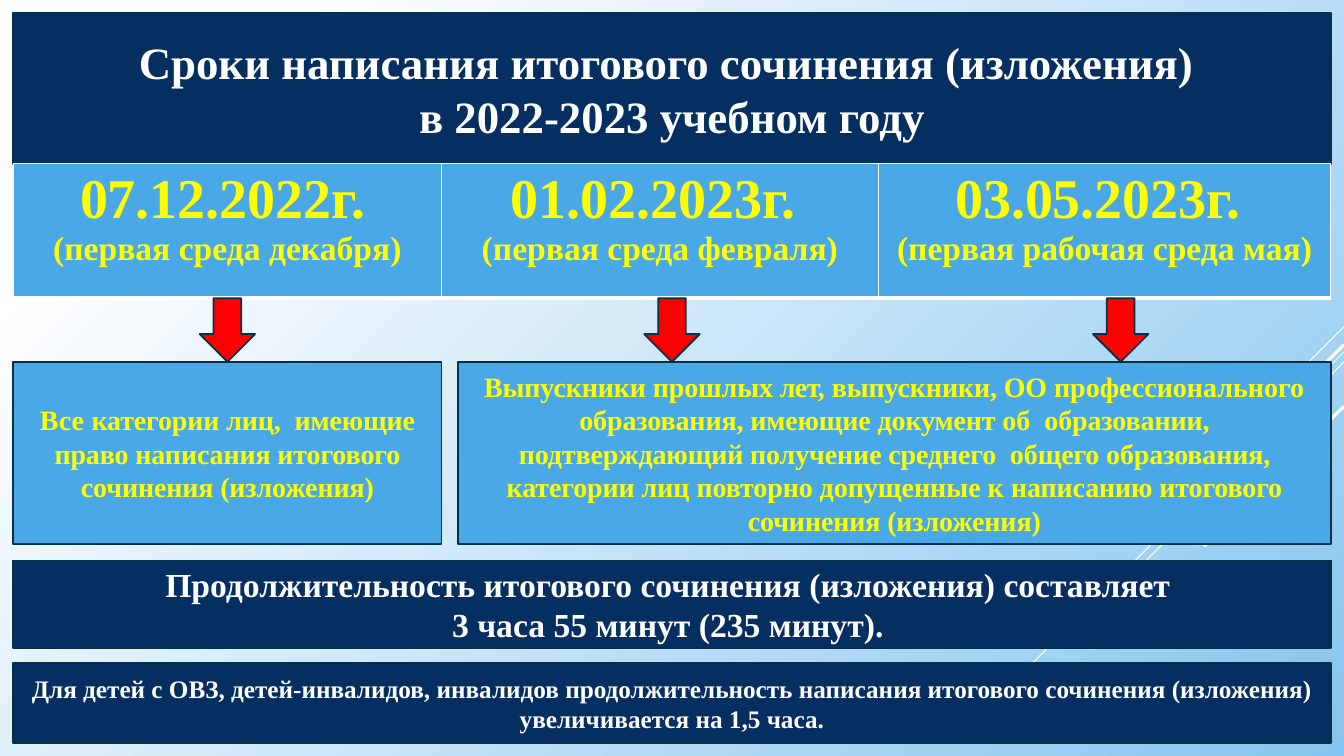
import pptx
import pptx.util
import pptx.dml.color
import pptx.enum.dml
import pptx.enum.shapes
import pptx.enum.text
import pptx.oxml
import pptx.oxml.ns

Inches = pptx.util.Inches
Pt = pptx.util.Pt
Shapes = pptx.enum.shapes.MSO_SHAPE

FONT = "Times New Roman"
NAVY, SKY, EDGE = "052F61", "4AA8E7", "043148"
WHITE, YELLOW, RED = "FFFFFF", "FFFF00", "FF0000"
LEFT, WIDTH, GAP = 0.13, 13.07, 0.16
COLUMNS = (4.25, 4.33, 4.49)
DATES_TOP, DATES_HEIGHT = 1.62, 1.34
CARDS_TOP, CARDS_HEIGHT = 3.59, 1.81
ARROW_WIDTH = 0.55

STRIPES = [
    (3.24, 12.33, 4.24, 0.75),
    (3.49, 10.07, 6.75, 0.75),
    (3.59, 11.26, 5.67, 0.75),
    (3.42, 11.42, 5.33, 2.25),
    (4.03, 11.94, 5.42, 2.25),
]
DATES = [
    ([("07.12.2022г.", 40), (" ", 28)], "(первая среда декабря)"),
    ([("01.02.2023г. ", 40)], "(первая среда февраля)"),
    ([("03.05.2023г. ", 40)], "(первая рабочая среда мая)"),
]
EVERYONE = [
    [("Все ", 0.1), ("категории лиц,  имеющие право написания итогового", -0.1)],
    [("сочинения (изложения)", -0.1)],
]
GRADUATES = [[
    ("Выпускники прошлых ", -0.1),
    ("лет,", -0.4),
    (" выпускники, ОО ", -0.1),
    ("профессионального ", 0),
    ("образования, имеющие документ ", -0.1),
    ("об  ", 0),
    ("образовании, подтверждающий получение среднего  общего образования, категории ", -0.1),
    ("лиц ", 0),
    ("повторно ", -0.1),
    ("допущенные к ", 0),
    ("написанию итогового сочинения (изложения)", -0.1),
]]


def color(value):
    return pptx.dml.color.RGBColor.from_string(value)


def add_span(para, text, size, ink, spacing=0):
    span = para.add_run()
    span.text = text
    span.font.name = FONT
    span.font.size = Pt(size)
    span.font.bold = True
    span.font.color.rgb = color(ink)
    if spacing:
        span._r.get_or_add_rPr().set("spc", str(round(spacing * 100)))


def add_para(frame, index):
    para = frame.add_paragraph() if index else frame.paragraphs[0]
    para.alignment = pptx.enum.text.PP_ALIGN.CENTER
    return para


def add_block(page, kind, box, fill):
    shape = page.shapes.add_shape(kind, *map(Inches, box))
    shape.shadow.inherit = False
    shape.fill.solid()
    shape.fill.fore_color.rgb = color(fill)
    shape.line.color.rgb = color(EDGE)
    shape.line.width = Pt(1.25)
    return shape


def add_panel(page, box, fill, ink, size, paragraphs, space_before=0):
    frame = add_block(page, Shapes.FLOWCHART_PROCESS, box, fill).text_frame
    frame.word_wrap = True
    frame.vertical_anchor = pptx.enum.text.MSO_ANCHOR.MIDDLE
    for index, spans in enumerate(paragraphs):
        para = add_para(frame, index)
        if index == 0:
            para.space_before = Pt(space_before)
        for text, spacing in spans:
            add_span(para, text, size, ink, spacing)


def add_banner(page, box, size, lines):
    add_panel(page, box, NAVY, WHITE, size, [[(line, 0)] for line in lines])


def add_background(page, right):
    fill = page.background.fill
    fill.gradient()
    fill.gradient_angle = 315
    for stop, position, value in zip(fill.gradient_stops, (0.14, 1), (WHITE, "86C5EF")):
        stop.position = position
        stop.color.rgb = color(value)
    for top, end_left, end_top, weight in STRIPES:
        stripe = page.shapes.add_connector(
            pptx.enum.shapes.MSO_CONNECTOR.STRAIGHT,
            Inches(right), Inches(top), Inches(end_left), Inches(end_top))
        stripe.line.color.rgb = color(WHITE)
        stripe.line.width = Pt(weight)
        stripe._element.spPr.append(pptx.oxml.parse_xml(
            f'<a:effectLst {pptx.oxml.ns.nsdecls("a")}/>'))


def add_borders(cell):
    properties = cell._tc.get_or_add_tcPr()
    for index, (side, weight) in enumerate((("L", 1), ("R", 1), ("T", 1), ("B", 3))):
        properties.insert(index, pptx.oxml.parse_xml(
            f'<a:ln{side} {pptx.oxml.ns.nsdecls("a")} w="{Pt(weight)}"><a:solidFill>'
            f'<a:srgbClr val="{WHITE}"/></a:solidFill></a:ln{side}>'))


def add_dates(page, box):
    table = page.shapes.add_table(1, len(DATES), *map(Inches, box)).table
    for index, (date_spans, note) in enumerate(DATES):
        table.columns[index].width = Inches(COLUMNS[index])
        cell = table.cell(0, index)
        cell.fill.solid()
        cell.fill.fore_color.rgb = color(SKY)
        add_borders(cell)
        for row, spans in enumerate((date_spans, [(note, 24)])):
            para = add_para(cell.text_frame, row)
            for text, size in spans:
                add_span(para, text, size, YELLOW)


def add_arrows(page, top, height):
    for left in (1.98, 6.39, 10.84):
        add_block(page, Shapes.DOWN_ARROW, (left, top, ARROW_WIDTH, height), RED)


def add_cards(page, box):
    left, top, width, height = box
    first = COLUMNS[0]
    second_left = left + first + GAP
    add_panel(page, (left, top, first, height), SKY, YELLOW, 20, EVERYONE, 1)
    add_panel(page, (second_left, top, left + width - second_left, height),
              SKY, YELLOW, 20, GRADUATES, 1)


def main():
    deck = pptx.Presentation()
    deck.slide_width = Inches(13.33)
    deck.slide_height = Inches(7.5)
    page = deck.slides.add_slide(deck.slide_layouts[6])
    add_background(page, 13.33)
    add_banner(page, (LEFT, 0.13, WIDTH, 1.5), 32, [
        "Сроки написания итогового сочинения (изложения) ",
        "в 2022-2023 учебном году"])
    add_dates(page, (LEFT, DATES_TOP, WIDTH, DATES_HEIGHT))
    add_cards(page, (LEFT, CARDS_TOP, WIDTH, CARDS_HEIGHT))
    arrows_top = DATES_TOP + DATES_HEIGHT
    add_arrows(page, arrows_top, CARDS_TOP - arrows_top)
    add_banner(page, (LEFT, 5.56, WIDTH, 0.87), 24, [
        "Продолжительность итогового сочинения (изложения) составляет ",
        "3 часа 55 минут (235 минут). "])
    add_banner(page, (LEFT, 6.58, WIDTH, 0.79), 18, [
        "Для детей с ОВЗ, детей-инвалидов, инвалидов продолжительность написания "
        "итогового сочинения (изложения) увеличивается на 1,5 часа."])
    deck.save("out.pptx")


if __name__ == "__main__":
    main()
